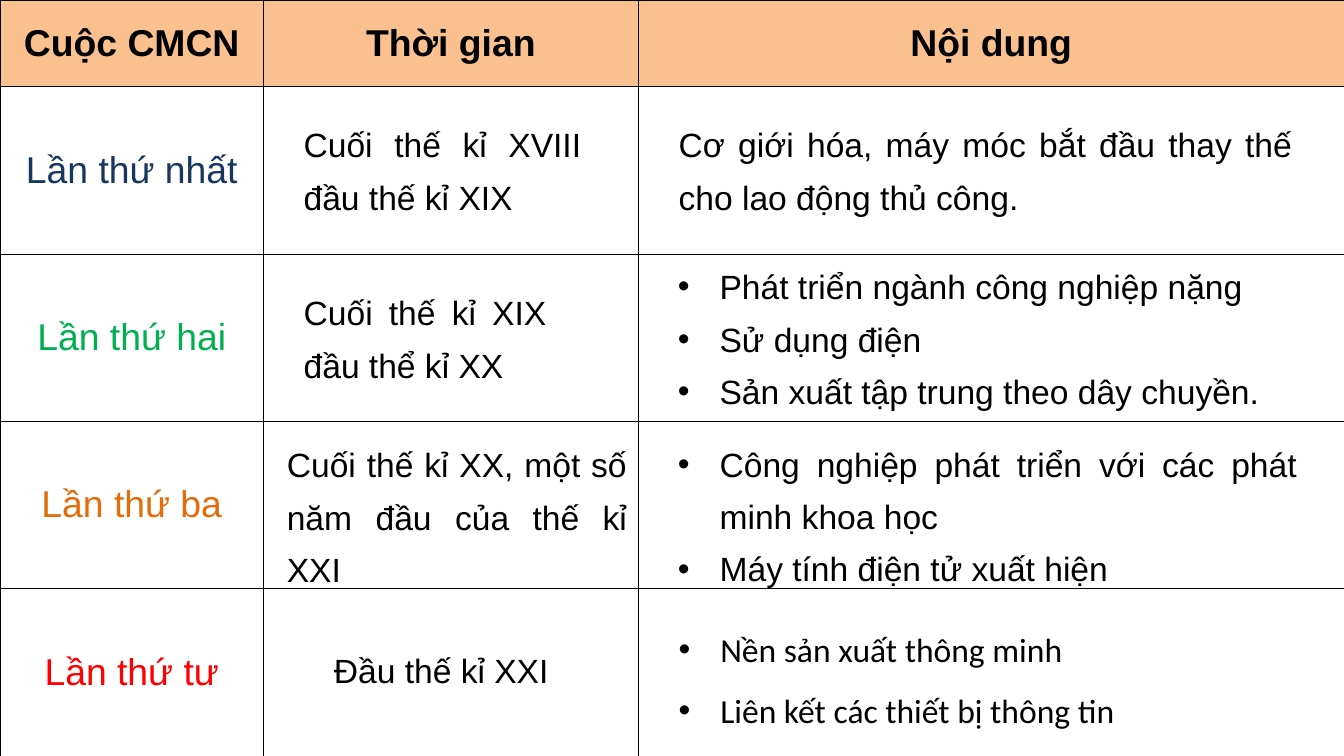
from lxml.etree import SubElement
from pptx import Presentation
from pptx.dml.color import RGBColor as RGB
from pptx.enum.text import MSO_ANCHOR as Anchor, MSO_AUTO_SIZE as AutoSize, PP_ALIGN as Align
from pptx.oxml.ns import qn
from pptx.util import Inches, Pt

COLORS = {
    "backdrop": "8FBE9E", "header": "FAC090", "cell": "FFFFFF", "ink": "000000",
    "first": "17375E", "second": "00B050", "third": "E46C0A", "fourth": "FF0000",
}
HEADERS = ["Cuộc CMCN", "Thời gian", "Nội dung"]
REVOLUTIONS = [
    ("Lần thứ nhất", "first"), ("Lần thứ hai", "second"),
    ("Lần thứ ba", "third"), ("Lần thứ tư", "fourth"),
]
COLUMN_WIDTHS = [3.92, 5.58, 10.5]
ROW_HEIGHTS = [1.29] + [2.49] * len(REVOLUTIONS)
PERIODS = [
    ((4.42, 1.62, 4.33, 1.68), ["Cuối thế kỉ XVIII đầu thế kỉ XIX"], {}),
    ((4.42, 4.12, 3.81, 1.68), ["Cuối thế kỉ XIX đầu thể kỉ XX"], {}),
    ((4.17, 6.38, 5.26, 2.46), ["Cuối thế kỉ XX, một số năm đầu của thế kỉ XXI"], {}),
    ((4.87, 9.62, 3.43, 0.71), ["Đầu thế kỉ XXI"],
     {"wrap": False, "align": Align.LEFT, "spacing": 1.0}),
]
CONTENTS = [
    ((10, 1.62, 9.33, 1.68),
     ["Cơ giới hóa, máy móc bắt đầu thay thế cho lao động thủ công."], {}),
    ((9.99, 3.73, 9.67, 2.46),
     ["Phát triển ngành công nghiệp nặng", "Sử dụng điện",
      "Sản xuất tập trung theo dây chuyền."], {"bullet": True}),
    ((9.99, 6.37, 9.41, 2.46),
     ["Công nghiệp phát triển với các phát minh khoa học",
      "Máy tính điện tử xuất hiện"], {"bullet": True}),
    ((10, 9.01, 10, 1.92),
     ["Nền sản xuất thông minh", "Liên kết các thiết bị thông tin"],
     {"bullet": True, "spacing": 1.5, "font": "Calibri"}),
]


class SlideBuilder:
    font = "Arial"
    table_size = 40
    text_size = 36
    indent = 0.62

    def __init__(self, slide):
        self.slide = slide
        self.fill(slide.background, "backdrop")

    def fill(self, target, color):
        target.fill.solid()
        target.fill.fore_color.rgb = RGB.from_string(COLORS[color])

    def add_span(self, para, text, color="ink", **formats):
        span = para.add_run()
        span.text = text
        for name, value in formats.items():
            setattr(span.font, name, value)
        span.font.color.rgb = RGB.from_string(COLORS[color])

    def borders(self, cell):
        properties = cell._tc.get_or_add_tcPr()
        for side in ("lnL", "lnR", "lnT", "lnB"):
            line = SubElement(properties, qn(f"a:{side}"), w=str(Pt(1)))
            solid = SubElement(line, qn("a:solidFill"))
            SubElement(solid, qn("a:srgbClr"), val=COLORS["ink"])

    def bullet(self, para):
        properties = para._p.get_or_add_pPr()
        properties.set("marL", str(Inches(self.indent)))
        properties.set("indent", str(Inches(-self.indent)))
        SubElement(properties, qn("a:buFont"), typeface="Arial")
        SubElement(properties, qn("a:buChar"), char="•")

    def table(self, widths, heights):
        frame = self.slide.shapes.add_table(
            len(heights), len(widths), 0, 0, Inches(sum(widths)), Inches(sum(heights)))
        table = frame.table
        table.horz_banding = False
        for column, width in zip(table.columns, widths):
            column.width = Inches(width)
        for row, height in zip(table.rows, heights):
            row.height = Inches(height)
        for index, row in enumerate(table.rows):
            for cell in row.cells:
                self.borders(cell)
                self.fill(cell, "cell" if index else "header")
        return table

    def label(self, cell, text, color="ink", bold=False):
        cell.vertical_anchor = Anchor.MIDDLE
        para = cell.text_frame.paragraphs[0]
        para.alignment = Align.CENTER
        self.add_span(para, text, color, name=self.font, size=Pt(self.table_size), bold=bold)

    def text(self, place, lines, bullet=False, wrap=True,
             align=Align.JUSTIFY, spacing=1.3, font=None):
        box = self.slide.shapes.add_textbox(*map(Inches, place))
        frame = box.text_frame
        frame.word_wrap = wrap
        frame.auto_size = AutoSize.SHAPE_TO_FIT_TEXT
        for index, line in enumerate(lines):
            para = frame.add_paragraph() if index else frame.paragraphs[0]
            for name, value in {"alignment": align, "line_spacing": spacing}.items():
                setattr(para, name, value)
            if bullet:
                self.bullet(para)
            self.add_span(para, line, name=font or self.font, size=Pt(self.text_size))


def main():
    deck = Presentation()
    deck.slide_width, deck.slide_height = Inches(20), Inches(11.25)
    page = SlideBuilder(deck.slides.add_slide(deck.slide_layouts[6]))

    table = page.table(COLUMN_WIDTHS, ROW_HEIGHTS)
    for column, header in enumerate(HEADERS):
        page.label(table.cell(0, column), header, bold=True)
    for row, (name, color) in enumerate(REVOLUTIONS, start=1):
        page.label(table.cell(row, 0), name, color)

    for period, content in zip(PERIODS, CONTENTS):
        for place, lines, formats in (period, content):
            page.text(place, lines, **formats)

    deck.save("out.pptx")


if __name__ == "__main__":
    main()
